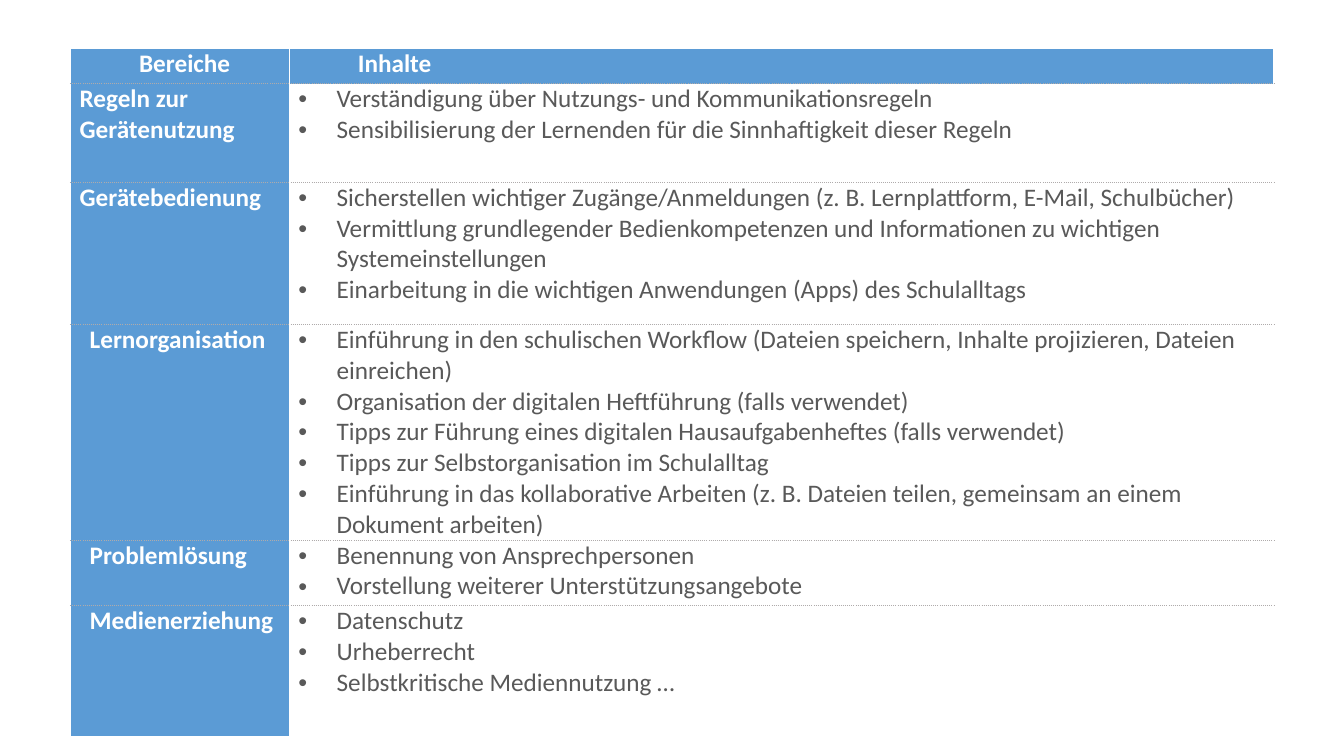
from dataclasses import dataclass

from lxml.etree import SubElement
from pptx import Presentation
from pptx.dml.color import RGBColor
from pptx.oxml.ns import qn
from pptx.util import Inches, Pt


@dataclass(frozen=True)
class Theme:
    font: str = "Calibri"
    size: int = 18
    blue: str = "5B9BD5"
    white: str = "FFFFFF"
    text: str = "595959"
    rule: str = "AFABAB"


THEME = Theme()
WIDTHS = (2.17, 9.76)
HEAD = ("Bereiche", "Inhalte")
HEAD_HEIGHT = 0.35
HEAD_INDENT = (0.59, 0)
HANG = (0.59, -0.49)
FLUSH = (0, 0)
BULLET = (0.38, -0.38)

# Area, its indent, row height, contents
AREAS = (
    ("Regeln zur Gerätenutzung", FLUSH, 0.98, (
        "Verständigung über Nutzungs- und Kommunikationsregeln",
        "Sensibilisierung der Lernenden für die Sinnhaftigkeit dieser Regeln",
    )),
    ("Gerätebedienung", FLUSH, 1.41, (
        "Sicherstellen wichtiger Zugänge/Anmeldungen (z. B. Lernplattform, E-Mail, Schulbücher)",
        "Vermittlung grundlegender Bedienkompetenzen und Informationen zu wichtigen "
        "Systemeinstellungen",
        "Einarbeitung in die wichtigen Anwendungen (Apps) des Schulalltags",
    )),
    ("Lernorganisation", HANG, 2.14, (
        "Einführung in den schulischen Workflow (Dateien speichern, Inhalte projizieren, "
        "Dateien einreichen)",
        "Organisation der digitalen Heftführung (falls verwendet)",
        "Tipps zur Führung eines digitalen Hausaufgabenheftes (falls verwendet)",
        "Tipps zur Selbstorganisation im Schulalltag",
        "Einführung in das kollaborative Arbeiten (z. B. Dateien teilen, gemeinsam an einem "
        "Dokument arbeiten)",
    )),
    ("Problemlösung", HANG, 0.65, (
        "Benennung von Ansprechpersonen",
        "Vorstellung weiterer Unterstützungsangebote",
    )),
    ("Medienerziehung", HANG, 1.3, (
        "Datenschutz",
        "Urheberrecht",
        "Selbstkritische Mediennutzung …",
    )),
)


def add_border(cell, side, color, dash):
    line = SubElement(cell._tc.get_or_add_tcPr(), qn(f"a:ln{side}"), w=str(Pt(1)))
    fill = SubElement(line, qn("a:solidFill"))
    SubElement(fill, qn("a:srgbClr"), val=color)
    SubElement(line, qn("a:prstDash"), val=dash)


def style_cell(cell, fill, first, last):
    cell.margin_left = cell.margin_right = Inches(0.09)
    cell.margin_top = cell.margin_bottom = 0
    # Dotted rules between rows, white lines on the outside
    white, dots = (THEME.white, "solid"), (THEME.rule, "sysDot")
    add_border(cell, "L", *white)
    add_border(cell, "R", *white)
    add_border(cell, "T", *(white if first else dots))
    add_border(cell, "B", *(white if last else dots))
    if fill:
        cell.fill.solid()
        cell.fill.fore_color.rgb = RGBColor.from_string(fill)
    else:
        cell.fill.background()


def write_cell(cell, lines, indent, color, bold=False, bullet=False):
    frame = cell.text_frame
    frame.text = "\n".join(lines)
    for para in frame.paragraphs:
        props = para._p.get_or_add_pPr()
        left, hang = indent
        props.set("marL", str(Inches(left)))
        props.set("indent", str(Inches(hang)))
        if bullet:
            SubElement(props, qn("a:buFont"), typeface="Arial")
            SubElement(props, qn("a:buChar"), char="•")
        for run in para.runs:
            font = run.font
            font.name, font.size, font.bold = THEME.font, Pt(THEME.size), bold
            font.color.rgb = RGBColor.from_string(color)


def add_grid(slide):
    heights = [HEAD_HEIGHT] + [area[2] for area in AREAS]
    grid = slide.shapes.add_table(
        len(heights), len(WIDTHS), Inches(0.7), Inches(0.48),
        Inches(sum(WIDTHS)), Inches(sum(heights))).table
    grid.horz_banding = False
    for col, width in zip(grid.columns, WIDTHS):
        col.width = Inches(width)
    for index, height in enumerate(heights):
        grid.rows[index].height = Inches(height)
        for col in range(len(WIDTHS)):
            fill = THEME.blue if index == 0 or col == 0 else None
            style_cell(grid.cell(index, col), fill, index == 0, index == len(AREAS))
    return grid


def main():
    deck = Presentation()
    deck.slide_width, deck.slide_height = Inches(13.33), Inches(7.5)
    slide = deck.slides.add_slide(deck.slide_layouts[6])
    grid = add_grid(slide)
    # Header row
    for col, label in enumerate(HEAD):
        write_cell(grid.cell(0, col), [label], HEAD_INDENT, THEME.white, bold=True)
    # Areas with their contents
    for row, (area, indent, _, items) in enumerate(AREAS, 1):
        write_cell(grid.cell(row, 0), [area], indent, THEME.white, bold=True)
        write_cell(grid.cell(row, 1), items, BULLET, THEME.text, bullet=True)
    deck.save("out.pptx")


if __name__ == "__main__":
    main()
